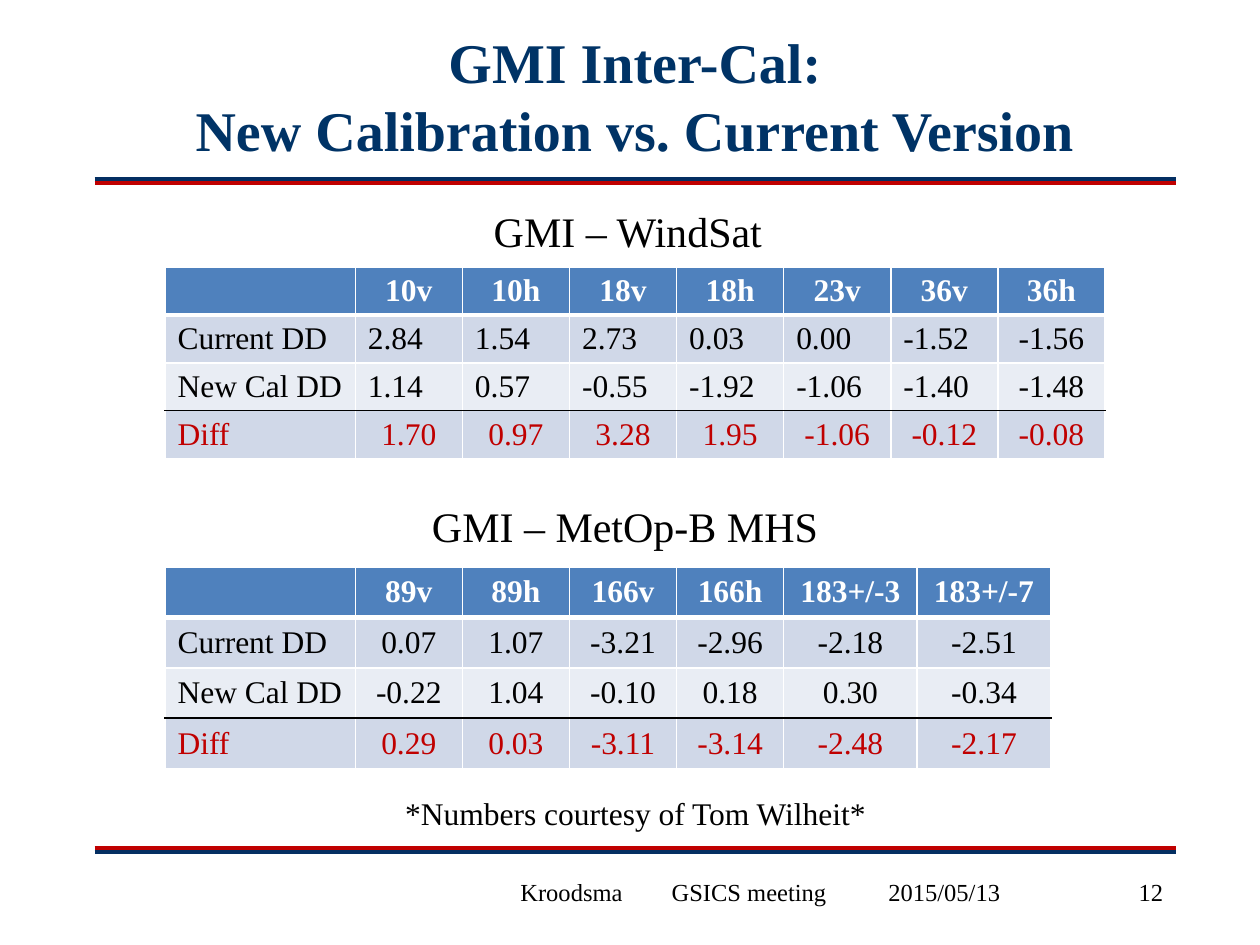
from lxml import etree
from pptx import Presentation
from pptx.dml.color import RGBColor
from pptx.enum.shapes import MSO_CONNECTOR
from pptx.enum.text import MSO_ANCHOR, PP_ALIGN
from pptx.oxml.ns import qn
from pptx.util import Inches, Pt

LEFT, CENTER, RIGHT = PP_ALIGN.LEFT, PP_ALIGN.CENTER, PP_ALIGN.RIGHT
TOP, MIDDLE = MSO_ANCHOR.TOP, MSO_ANCHOR.MIDDLE
STRAIGHT = MSO_CONNECTOR.STRAIGHT
FONT = "Times New Roman"
COLORS = {
    "title": "003366",
    "navy": "042F62",
    "red": "C00000",
    "black": "000000",
    "white": "FFFFFF",
    "header": "4F81BD",
    "band": "D0D8E8",
    "pale": "E9EDF4",
}
ROW_FILLS = ["header", "band", "pale", "band"]
ROW_TEXT = ["white", "black", "black", "red"]
RULES = [("white", 1), ("white", 3), ("white", 1), ("black", 1), ("white", 1)]

WINDSAT = [
    ["", "10v", "10h", "18v", "18h", "23v", "36v", "36h"],
    ["Current DD", "2.84", "1.54", "2.73", "0.03", "0.00", "-1.52", "-1.56"],
    ["New Cal DD", "1.14", "0.57", "-0.55", "-1.92", "-1.06", "-1.40", "-1.48"],
    ["Diff", "1.70", "0.97", "3.28", "1.95", "-1.06", "-0.12", "-0.08"],
]
METOP = [
    ["", "89v", "89h", "166v", "166h", "183+/-3", "183+/-7"],
    ["Current DD", "0.07", "1.07", "-3.21", "-2.96", "-2.18", "-2.51"],
    ["New Cal DD", "-0.22", "1.04", "-0.10", "0.18", "0.30", "-0.34"],
    ["Diff", "0.29", "0.03", "-3.11", "-3.14", "-2.48", "-2.17"],
]


def color(name):
    return RGBColor.from_string(COLORS[name])


def write(frame, text, size=18, ink="black", bold=False, align=LEFT):
    para = frame.paragraphs[0]
    para.text = text
    para.alignment = align
    for span in para.runs:
        span.font.name = FONT
        span.font.size = Pt(size)
        span.font.bold = bold
        span.font.color.rgb = color(ink)
    return para


def add_text(page, text, left, top, width, height, anchor=TOP, wrap=True, **style):
    box = page.shapes.add_textbox(
        Inches(left), Inches(top), Inches(width), Inches(height))
    box.text_frame.word_wrap = wrap
    box.text_frame.vertical_anchor = anchor
    write(box.text_frame, text, **style)
    return box


def add_tabs(box, stops):
    properties = box.text_frame.paragraphs[0]._p.get_or_add_pPr()
    tabs = etree.SubElement(properties, qn("a:tabLst"))
    for stop in stops:
        etree.SubElement(tabs, qn("a:tab"), pos=str(Inches(stop)), algn="l")


def add_rule(page, height, ink):
    line = page.shapes.add_connector(
        STRAIGHT, Inches(0.75), Inches(height), Inches(9.33), Inches(height))
    line.line.color.rgb = color(ink)
    line.line.width = Pt(2.5)
    etree.SubElement(line._element.spPr, qn("a:effectLst"))


def set_borders(cell, above, below):
    side = ("white", 1)
    properties = cell._tc.get_or_add_tcPr()
    edges = {"a:lnL": side, "a:lnR": side, "a:lnT": above, "a:lnB": below}
    for tag, (ink, width) in edges.items():
        border = etree.SubElement(properties, qn(tag), w=str(Pt(width)))
        fill = etree.SubElement(border, qn("a:solidFill"))
        etree.SubElement(fill, qn("a:srgbClr"), val=COLORS[ink])


def add_data_table(page, rows, top, widths, row_height, left_cells=()):
    table = page.shapes.add_table(
        len(rows), len(widths), Inches(1.31), Inches(top),
        Inches(sum(widths)), Inches(row_height * len(rows))).table
    for column, width in zip(table.columns, widths):
        column.width = Inches(width)
    for r, values in enumerate(rows):
        table.rows[r].height = Inches(row_height)
        for c, value in enumerate(values):
            cell = table.cell(r, c)
            set_borders(cell, RULES[r], RULES[r + 1])
            cell.fill.solid()
            cell.fill.fore_color.rgb = color(ROW_FILLS[r])
            cell.vertical_anchor = MIDDLE
            cell.margin_top = cell.margin_bottom = Inches(0.04)
            align = LEFT if c == 0 or (r, c) in left_cells else CENTER
            write(cell.text_frame, value, ink=ROW_TEXT[r], bold=r == 0, align=align)


def main():
    deck = Presentation()
    deck.slide_width, deck.slide_height = Inches(10), Inches(7.5)
    page = deck.slides.add_slide(deck.slide_layouts[6])

    for height, ink in [(1.42, "navy"), (1.45, "red"), (6.76, "navy"), (6.73, "red")]:
        add_rule(page, height, ink)
    add_text(page, "GMI Inter-Cal:\vNew Calibration vs. Current Version",
             0.75, 0.17, 8.58, 1.17, anchor=MIDDLE,
             size=32, ink="title", bold=True, align=CENTER)

    footer = add_text(page, "Kroodsma\tGSICS meeting\t2015/05/13",
                      4, 6.83, 4.08, 0.5, anchor=MIDDLE, size=14)
    footer.text_frame.margin_left = Inches(0.13)
    add_tabs(footer, [1.2, 2.92])
    add_text(page, "12", 8.08, 6.83, 1.25, 0.5, anchor=MIDDLE, size=14, align=RIGHT)

    left_cells = [(r, c) for r in (1, 2) for c in range(1, 7)]
    add_data_table(page, WINDSAT, 2.12, [1.51] + [0.85] * 7, 0.375, left_cells)
    add_text(page, "*Numbers courtesy of Tom Wilheit*",
             0.71, 6.25, 8.67, 0.4, align=CENTER)
    add_text(page, "GMI – WindSat", 3.82, 1.58, 2.35, 0.5, wrap=False, size=24)
    add_data_table(page, METOP, 4.5, [1.51] + [0.85] * 4 + [1.06] * 2, 0.4)
    add_text(page, "GMI – MetOp-B MHS", 3.33, 3.92, 3.3, 0.5, wrap=False, size=24)

    deck.save("out.pptx")


if __name__ == "__main__":
    main()
